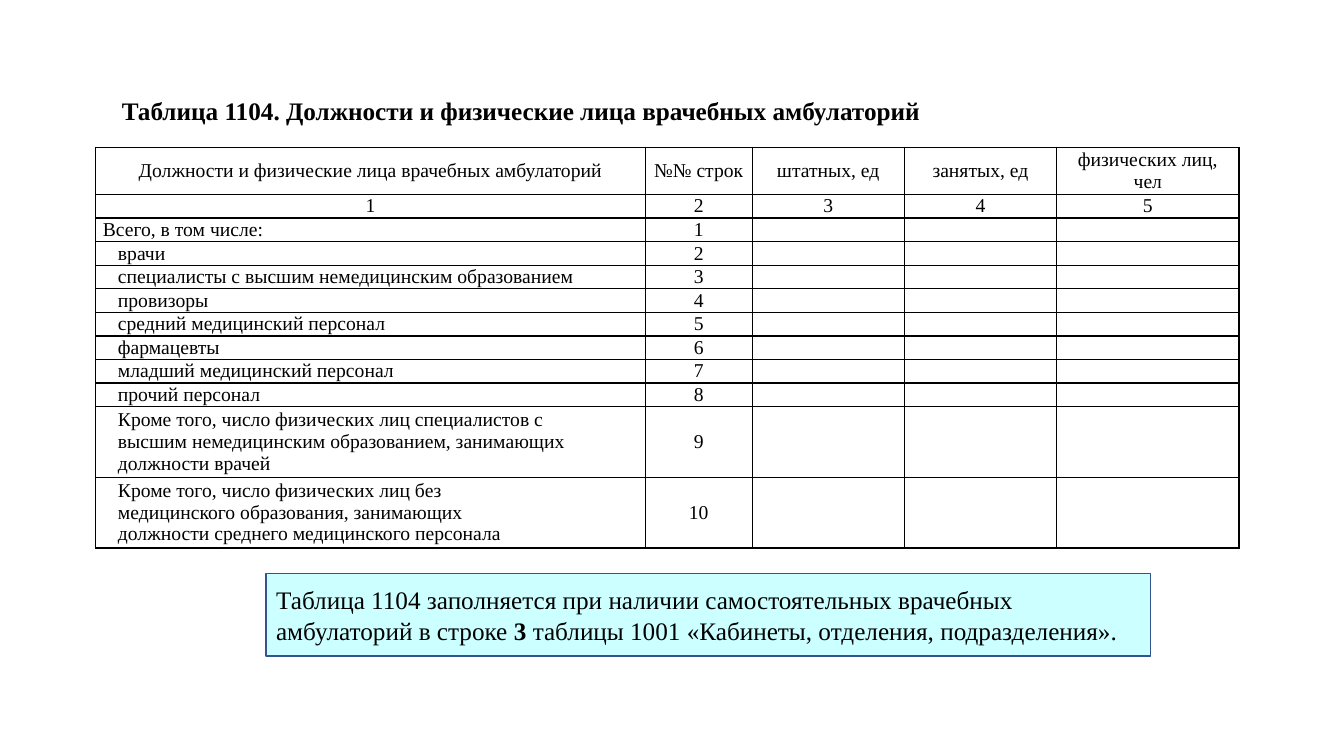
from lxml.etree import SubElement
from pptx import Presentation
from pptx.dml.color import RGBColor
from pptx.enum.shapes import MSO_SHAPE
from pptx.enum.text import MSO_ANCHOR, MSO_AUTO_SIZE, PP_ALIGN
from pptx.oxml.ns import qn
from pptx.util import Inches, Pt

COLORS = {"ink": "000000", "note": "CCFFFF", "edge": "325491"}
FACE = "Times New Roman"
WIDTHS = [5.45, 1.06, 1.51, 1.51, 1.81]
HEIGHTS = [Inches(0.47)] + [Inches(2.1) // 9] * 9 + [Inches(0.7)] * 2
HEAD = ["Должности и физические лица врачебных амбулаторий", "№№ строк",
        "штатных, ед", "занятых, ед", "физических лиц, чел"]
STAFF = [
    "Всего, в том числе:",
    "врачи",
    "специалисты с высшим немедицинским образованием",
    "провизоры",
    "средний медицинский персонал",
    "фармацевты",
    "младший медицинский персонал",
    "прочий персонал",
    "Кроме того, число физических лиц специалистов с\n"
    "высшим немедицинским образованием, занимающих\n"
    "должности врачей",
    "Кроме того, число физических лиц без\n"
    "медицинского образования, занимающих\n"
    "должности среднего медицинского персонала",
]


def color(name):
    return RGBColor.from_string(COLORS[name])


def assign(item, values):
    for key, value in values.items():
        setattr(item, key, value)


def add_run(para, text, size, bold=False):
    run = para.add_run()
    run.text = text
    assign(run.font, {"size": Pt(size), "name": FACE, "bold": bold})
    run.font.color.rgb = color("ink")


def add_title(slide, text):
    box = slide.shapes.add_textbox(Inches(1.11), Inches(0.9), Inches(11.26), Inches(0.4))
    assign(box.text_frame, {"word_wrap": True, "auto_size": MSO_AUTO_SIZE.SHAPE_TO_FIT_TEXT})
    add_run(box.text_frame.paragraphs[0], text, 18, True)


def add_note(slide, parts):
    box = slide.shapes.add_shape(MSO_SHAPE.RECTANGLE, Inches(2.64), Inches(5.69),
                                 Inches(8.77), Inches(0.82))
    box.shadow.inherit = False
    box.fill.solid()
    box.fill.fore_color.rgb = color("note")
    box.line.color.rgb = color("edge")
    box.line.width = Pt(1)
    assign(box.text_frame, {"word_wrap": True, "vertical_anchor": MSO_ANCHOR.MIDDLE})
    para = box.text_frame.paragraphs[0]
    para.alignment = PP_ALIGN.LEFT
    for text, bold in parts:
        add_run(para, text, 18, bold)


def add_edges(cell):
    props = cell._tc.get_or_add_tcPr()
    for side in ("lnL", "lnR", "lnT", "lnB"):
        line = SubElement(props, qn(f"a:{side}"), w=str(Pt(1)))
        fill = SubElement(line, qn("a:solidFill"))
        SubElement(fill, qn("a:srgbClr"), val=COLORS["ink"])


def fill_cell(cell, text, align, indent):
    assign(cell, {"margin_left": Inches(0.07), "margin_right": Inches(0.07),
                  "margin_top": 0, "margin_bottom": 0,
                  "vertical_anchor": MSO_ANCHOR.MIDDLE})
    add_edges(cell)
    cell.fill.background()
    frame = cell.text_frame
    for num, line in enumerate(text.split("\n")):
        para = frame.add_paragraph() if num else frame.paragraphs[0]
        para.alignment = align
        if indent:
            para._p.get_or_add_pPr().set("marL", str(Inches(0.15)))
        if line:
            add_run(para, line, 14)
        else:
            SubElement(para._p, qn("a:endParaRPr"), sz="1400")


def add_grid(slide):
    rows = [HEAD, [str(num) for num in range(1, 6)]]
    rows += [[name, str(num), "", "", ""] for num, name in enumerate(STAFF, 1)]
    table = slide.shapes.add_table(len(rows), len(WIDTHS), Inches(0.95), Inches(1.46),
                                   Inches(sum(WIDTHS)), sum(HEIGHTS)).table
    assign(table, {"first_row": False, "horz_banding": False})
    for col, width in zip(table.columns, WIDTHS):
        col.width = Inches(width)
    for row, height in zip(table.rows, HEIGHTS):
        row.height = height
    for top, row in enumerate(rows):
        for left, text in enumerate(row):
            name = left == 0 and top > 1
            align = PP_ALIGN.LEFT if name else PP_ALIGN.CENTER
            fill_cell(table.cell(top, left), text, align, name and top > 2)


def main():
    deck = Presentation()
    assign(deck, {"slide_width": Inches(13.33), "slide_height": Inches(7.5)})
    slide = deck.slides.add_slide(deck.slide_layouts[6])
    add_title(slide, "Таблица 1104. Должности и физические лица врачебных амбулаторий")
    add_grid(slide)
    add_note(slide, [
        ("Таблица 1104 заполняется при наличии самостоятельных врачебных "
         "амбулаторий в строке ", False),
        ("3 ", True),
        ("таблицы 1001 «Кабинеты, отделения, подразделения».", False),
    ])
    deck.save("out.pptx")


if __name__ == "__main__":
    main()
